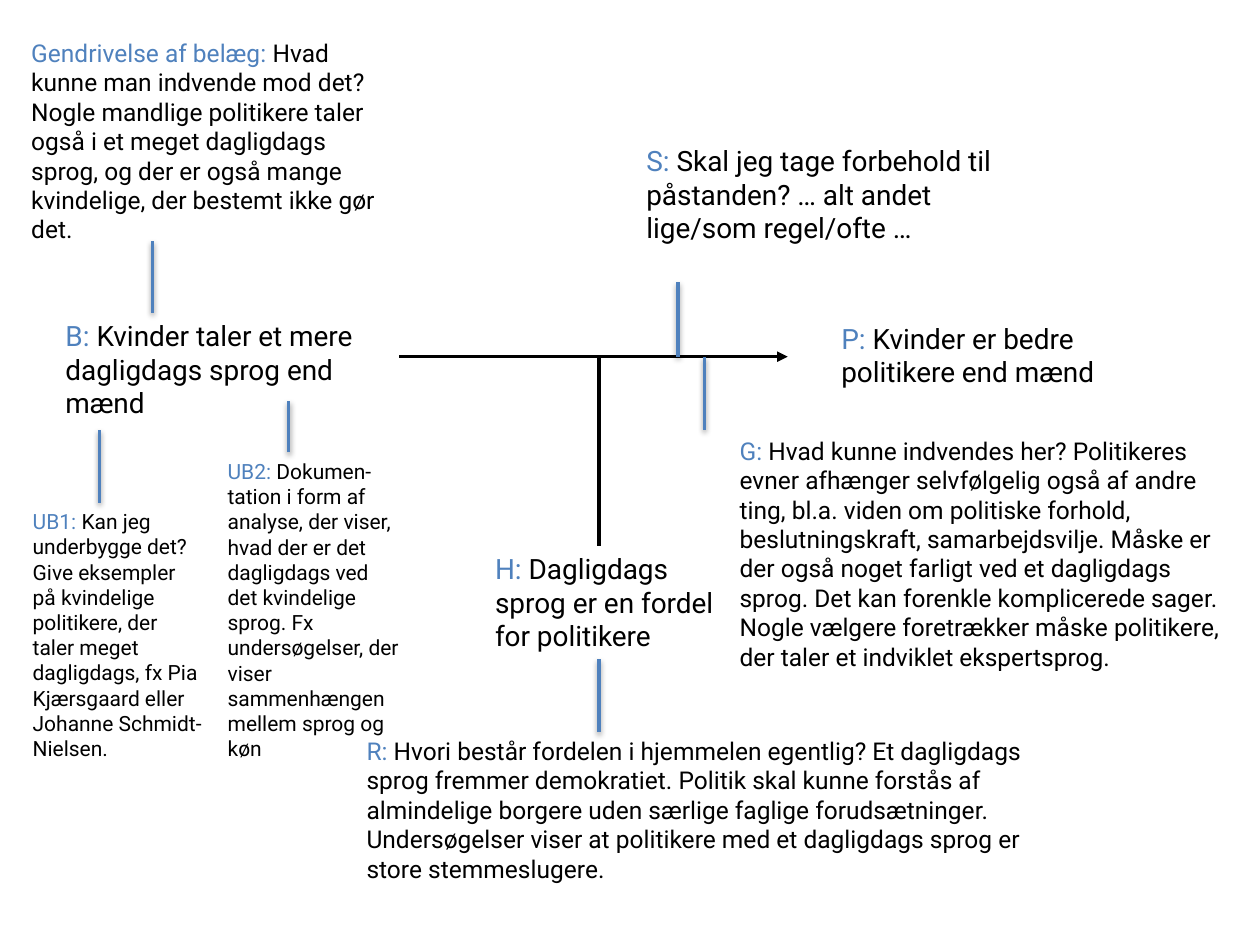
from lxml.etree import SubElement
from pptx import Presentation
from pptx.dml.color import RGBColor
from pptx.enum.shapes import MSO_CONNECTOR as Connector
from pptx.enum.text import MSO_AUTO_SIZE as AutoSize
from pptx.oxml.ns import qn
from pptx.util import Cm, Pt

BLUE = "4F81BD"
BLACK = "000000"
FONT = "Roboto"
AXIS_Y = 7.19
WARRANT_X = 12.07

STATEMENTS = [
    ("B: ", "Kvinder taler et mere dagligdags sprog end mænd", 16, (1.07, 6.3, 6.99, 2.31)),
    ("P: ", "Kvinder er bedre politikere end mænd", 16, (16.71, 6.35, 7.42, 1.63)),
    ("H: ", "Dagligdags sprog er en fordel for politikere", 16, (9.73, 11, 5.31, 2.31)),
    ("S: ", "Skal jeg tage forbehold til påstanden? … alt andet lige/som regel/ofte …",
     16, (12.78, 2.77, 7.92, 2.31)),
    ("UB2: ", "Dokumen-tation i form af analyse, der viser, hvad der er det dagligdags ved "
     "det kvindelige sprog. Fx undersøgelser, der viser sammenhængen mellem sprog og køn",
     12, (4.34, 9.12, 4.01, 6.4)),
    ("G: ", "Hvad kunne indvendes her? Politikeres evner afhænger selvfølgelig også af andre "
     "ting, bl.a. viden om politiske forhold, beslutningskraft, samarbejdsvilje. Måske er der "
     "også noget farligt ved et dagligdags sprog. Det kan forenkle komplicerede sager. Nogle "
     "vælgere foretrækker måske politikere, der taler et indviklet ekspertsprog.",
     14, (14.66, 8.66, 10.34, 5.74)),
    ("R: ", "Hvori består fordelen i hjemmelen egentlig? Et dagligdags sprog fremmer "
     "demokratiet. Politik skal kunne forstås af almindelige borgere uden særlige faglige "
     "forudsætninger. Undersøgelser viser at politikere med et dagligdags sprog er store "
     "stemmeslugere.", 14, (7.14, 14.71, 14.66, 3.84)),
    ("UB1: ", "Kan jeg underbygge det? Give eksempler på kvindelige politikere, der taler "
     "meget dagligdags, fx Pia Kjærsgaard eller Johanne Schmidt-Nielsen.",
     12, (0.41, 10.13, 3.94, 5.38)),
    ("Gendrivelse af belæg: ", "Hvad kunne man indvende mod det? Nogle mandlige politikere "
     "taler også i et meget dagligdags sprog, og der er også mange kvindelige, der bestemt "
     "ikke gør det.", 14, (0.38, 0.64, 7.92, 4.45)),
]

SUPPORT_LINES = [
    (13.67, AXIS_Y, 5.69),
    (14.2, 8.66, AXIS_Y),
    (WARRANT_X, 14.76, 13.28),
    (5.82, 9.12, 8.08),
    (2.01, 10.13, 8.66),
    (3.07, 6.3, 4.85),
]


def color(value):
    """Turn a hex string into a colour."""
    return RGBColor.from_string(value)


def add_statement(slide, label, statement, size, box):
    """Add a wrapped text with a blue label and a black statement."""
    text_frame = slide.shapes.add_textbox(*map(Cm, box)).text_frame
    text_frame.word_wrap = True
    text_frame.auto_size = AutoSize.NONE
    paragraph = text_frame.paragraphs[0]
    for text, shade in ((label, BLUE), (statement, BLACK)):
        run = paragraph.add_run()
        run.text = text
        run.font.name = FONT
        run.font.size = Pt(size)
        run.font.color.rgb = color(shade)


def add_line(slide, start, end, shade):
    """Add a straight line and return it with its empty effect list."""
    line = slide.shapes.add_connector(Connector.STRAIGHT, *map(Cm, start + end))
    line.line.color.rgb = color(shade)
    line.line.width = Pt(2)
    effects = SubElement(line._element.spPr, qn("a:effectLst"))
    return line, effects


def add_arrow(slide, start, end):
    """Add a black line with a triangular head at its end."""
    arrow, _ = add_line(slide, start, end, BLACK)
    SubElement(arrow.line._get_or_add_ln(), qn("a:tailEnd"), type="triangle")


def add_support_line(slide, x, start_y, end_y):
    """Add a vertical blue line with a soft shadow below."""
    _, effects = add_line(slide, (x, start_y), (x, end_y), BLUE)
    shadow = SubElement(effects, qn("a:outerShdw"), blurRad="40000", dist="20000",
                        dir="5400000", rotWithShape="0")
    shade = SubElement(shadow, qn("a:srgbClr"), val=BLACK)
    SubElement(shade, qn("a:alpha"), val="38000")


def main():
    """Build the argument model and save it."""
    presentation = Presentation()
    presentation.slide_width = Cm(25.4)
    presentation.slide_height = Cm(19.05)
    slide = presentation.slides.add_slide(presentation.slide_layouts[6])
    add_arrow(slide, (8.05, AXIS_Y), (15.88, AXIS_Y))
    add_line(slide, (WARRANT_X, AXIS_Y), (WARRANT_X, 11), BLACK)
    for support_line in SUPPORT_LINES:
        add_support_line(slide, *support_line)
    for statement in STATEMENTS:
        add_statement(slide, *statement)
    presentation.save("out.pptx")


if __name__ == "__main__":
    main()
